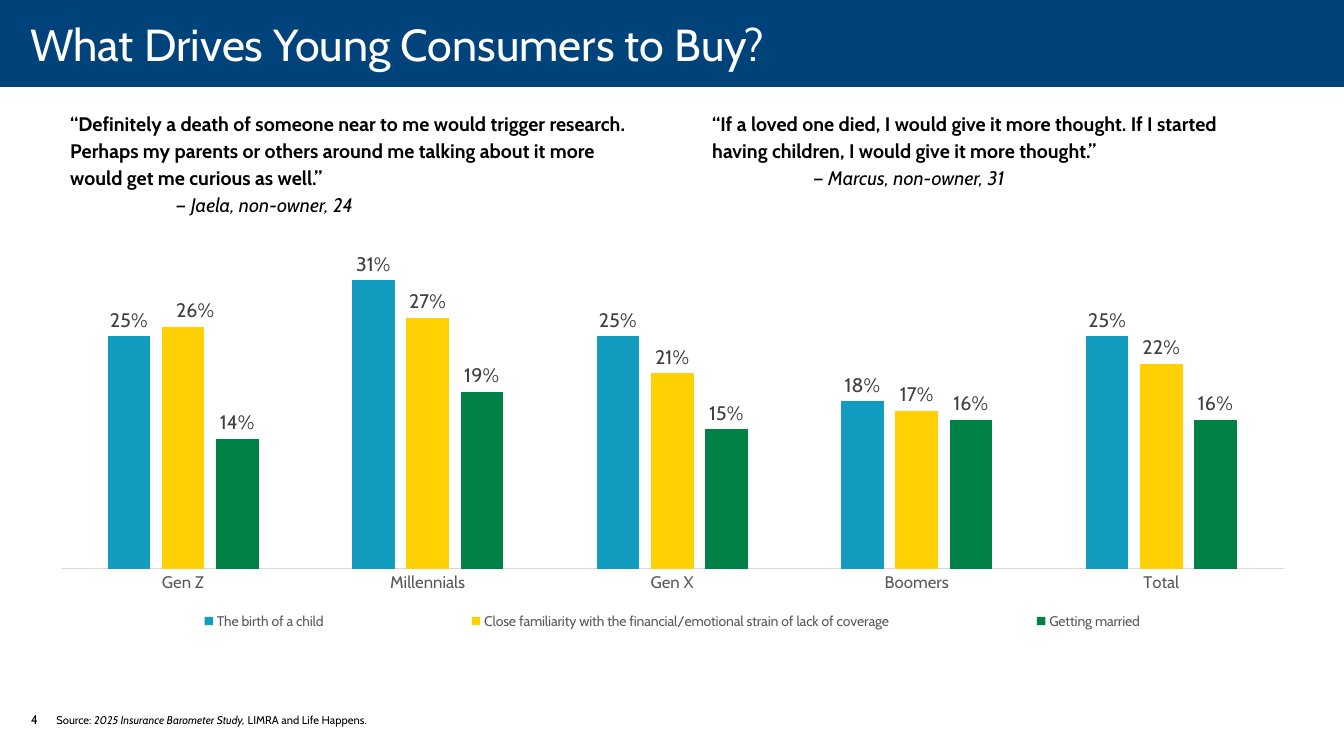
from dataclasses import dataclass

from lxml import etree
from pptx import Presentation
from pptx.chart.chart import Chart
from pptx.chart.data import CategoryChartData
from pptx.dml.color import RGBColor
from pptx.enum.chart import XL_CHART_TYPE, XL_LABEL_POSITION, XL_LEGEND_POSITION, XL_TICK_MARK
from pptx.enum.text import MSO_ANCHOR, PP_ALIGN
from pptx.oxml.ns import qn
from pptx.slide import Slide
from pptx.util import Cm, Pt

CLUSTERED = XL_CHART_TYPE.COLUMN_CLUSTERED
OUTSIDE_END = XL_LABEL_POSITION.OUTSIDE_END
LEGEND_BOTTOM = XL_LEGEND_POSITION.BOTTOM
NO_TICK = XL_TICK_MARK.NONE
LEFT = PP_ALIGN.LEFT
TOP, MIDDLE, BOTTOM = MSO_ANCHOR.TOP, MSO_ANCHOR.MIDDLE, MSO_ANCHOR.BOTTOM

FONT = "Cabin"
PERCENT = "0%"
COLOURS = {
    "band": "00437B",
    "white": "FFFFFF",
    "black": "000000",
    "axis text": "595959",
    "axis line": "D9D9D9",
    "label": "404040",
    "child": "129DC0",
    "strain": "FFD103",
    "married": "008145",
}


@dataclass
class Run:
    text: str
    bold: bool = False
    italic: bool = False


@dataclass
class Line:
    runs: list[Run]
    indent: float = 0


@dataclass
class TextBox:
    left: float
    top: float
    width: float
    height: float
    size: float
    lines: list[Line]
    spacing: float = 1.0
    anchor: MSO_ANCHOR = TOP


@dataclass
class Driver:
    name: str
    shares: list[float]
    colour: str


GENERATIONS = ["Gen Z", "Millennials", "Gen X", "Boomers", "Total"]
DRIVERS = [
    Driver("The birth of a child", [0.25, 0.31, 0.25, 0.18, 0.25], "child"),
    Driver("Close familiarity with the financial/emotional strain of lack of coverage",
           [0.26, 0.27, 0.21, 0.17, 0.22], "strain"),
    Driver("Getting married", [0.14, 0.19, 0.15, 0.16, 0.16], "married"),
]

TEXT_BOXES = [
    TextBox(1.52, 2.62, 14.66, 2.95, 14, [
        Line([Run("“Definitely a death of someone near to me would trigger research.", bold=True)]),
        Line([Run("Perhaps my parents or others around me talking about it more", bold=True)]),
        Line([Run("would get me curious as well.”", bold=True)]),
        Line([Run("— Jaela, non-owner, 24", italic=True)], indent=2.66),
    ], spacing=1.14),
    TextBox(17.7, 2.62, 14.66, 2.26, 14, [
        Line([Run("“If a loved one died, I would give it more thought. If I started "
                  "having children, I would give it more thought.”", bold=True)]),
        Line([Run("— Marcus, non-owner, 31", italic=True)], indent=2.54),
    ], spacing=1.14),
    TextBox(0.53, 17.81, 1.24, 1.02, 9, [Line([Run("4")])]),
    TextBox(1.17, 16.61, 14.86, 1.83, 8, [
        Line([Run("Source: "), Run("2025 Insurance Barometer Study, ", italic=True),
              Run("LIMRA and Life Happens.")]),
    ], anchor=BOTTOM),
]


def colour(name: str) -> RGBColor:
    return RGBColor.from_string(COLOURS[name])


def style_font(font, size: float, colour_name: str) -> None:
    font.name = FONT
    font.size = Pt(size)
    font.color.rgb = colour(colour_name)


def add_title(slide: Slide, text: str) -> None:
    title = slide.shapes.title
    title.left, title.top, title.width, title.height = Cm(0), Cm(0), Cm(33.87), Cm(2.19)
    title.fill.solid()
    title.fill.fore_color.rgb = colour("band")
    frame = title.text_frame
    frame.text = text
    frame.vertical_anchor = MIDDLE
    frame.margin_left, frame.margin_right = Cm(0.76), Cm(0.51)
    frame.margin_top = frame.margin_bottom = Cm(0)
    paragraph = frame.paragraphs[0]
    paragraph.alignment = LEFT
    style_font(paragraph.runs[0].font, 32, "white")


def add_text_box(slide: Slide, box: TextBox) -> None:
    shape = slide.shapes.add_textbox(Cm(box.left), Cm(box.top), Cm(box.width), Cm(box.height))
    frame = shape.text_frame
    frame.word_wrap = True
    frame.vertical_anchor = box.anchor
    for index, line in enumerate(box.lines):
        paragraph = frame.add_paragraph() if index else frame.paragraphs[0]
        paragraph.line_spacing = box.spacing
        if line.indent:
            paragraph._p.get_or_add_pPr().set("marL", str(Cm(line.indent)))
        for part in line.runs:
            run = paragraph.add_run()
            run.text = part.text
            style_font(run.font, box.size, "black")
            run.font.bold = part.bold
            run.font.italic = part.italic


def set_layout(parent, index: int, **settings: str | float) -> None:
    """Give a chart part a manual layout, placed at the index the schema asks for."""
    for old_layout in parent.findall(qn("c:layout")):
        parent.remove(old_layout)
    layout = etree.Element(qn("c:layout"))
    manual = etree.SubElement(layout, qn("c:manualLayout"))
    for name, value in settings.items():
        etree.SubElement(manual, qn(f"c:{name}")).set("val", str(value))
    parent.insert(index, layout)


def style_axes(chart: Chart) -> None:
    category_axis = chart.category_axis
    category_axis.major_tick_mark = NO_TICK
    category_axis.format.line.color.rgb = colour("axis line")
    category_axis.format.line.width = Pt(0.75)
    style_font(category_axis.tick_labels.font, 12, "axis text")
    value_axis = chart.value_axis
    value_axis.minimum_scale, value_axis.maximum_scale = 0, 0.35
    value_axis.has_major_gridlines = False
    value_axis.visible = False


def style_series(chart: Chart) -> None:
    for series, driver in zip(chart.plots[0].series, DRIVERS):
        series.format.fill.solid()
        series.format.fill.fore_color.rgb = colour(driver.colour)
        labels = series.data_labels
        labels.show_value = True
        labels.number_format = PERCENT
        labels.number_format_is_linked = False
        labels.position = OUTSIDE_END
        style_font(labels.font, 14, "label")


def shift_label(series, point: int, offset: float) -> None:
    """Move one value label sideways by a share of the chart width."""
    label = series.points[point].data_label
    label.position = OUTSIDE_END
    style_font(label.font, 14, "label")
    element = series._element.xpath("c:dLbls/c:dLbl")[0]
    set_layout(element, 1, x=offset, y=0)
    number_format = etree.Element(qn("c:numFmt"), formatCode=PERCENT, sourceLinked="0")
    element.insert(2, number_format)


def add_driver_chart(slide: Slide) -> None:
    data = CategoryChartData(number_format=PERCENT)
    data.categories = GENERATIONS
    for driver in DRIVERS:
        data.add_series(driver.name, driver.shares)
    chart = slide.shapes.add_chart(CLUSTERED, Cm(1.52), Cm(5.56), Cm(30.84), Cm(11.4), data).chart
    style_font(chart.font, 10, "black")
    chart.has_title = False
    plot = chart.plots[0]
    plot.gap_width, plot.overlap, plot.vary_by_categories = 219, -27, False
    style_axes(chart)
    style_series(chart)
    shift_label(plot.series[1], 0, 0.01)

    chart.has_legend = True
    legend = chart.legend
    legend.position = LEGEND_BOTTOM
    legend.include_in_layout = False
    style_font(legend.font, 10, "axis text")
    set_layout(legend._element, 1, xMode="edge", yMode="edge", x=0, y=0.85, w=1, h=0.07)
    plot_area = chart._chartSpace.xpath("c:chart/c:plotArea")[0]
    set_layout(plot_area, 0, layoutTarget="inner", xMode="edge", yMode="edge",
               x=0, y=0.05, w=1, h=0.72)


def main() -> None:
    presentation = Presentation()
    presentation.slide_width, presentation.slide_height = Cm(33.87), Cm(19.05)
    slide = presentation.slides.add_slide(presentation.slide_layouts[5])
    add_title(slide, "What Drives Young Consumers to Buy?")
    add_driver_chart(slide)
    for box in TEXT_BOXES:
        add_text_box(slide, box)
    presentation.save("out.pptx")


if __name__ == "__main__":
    main()
